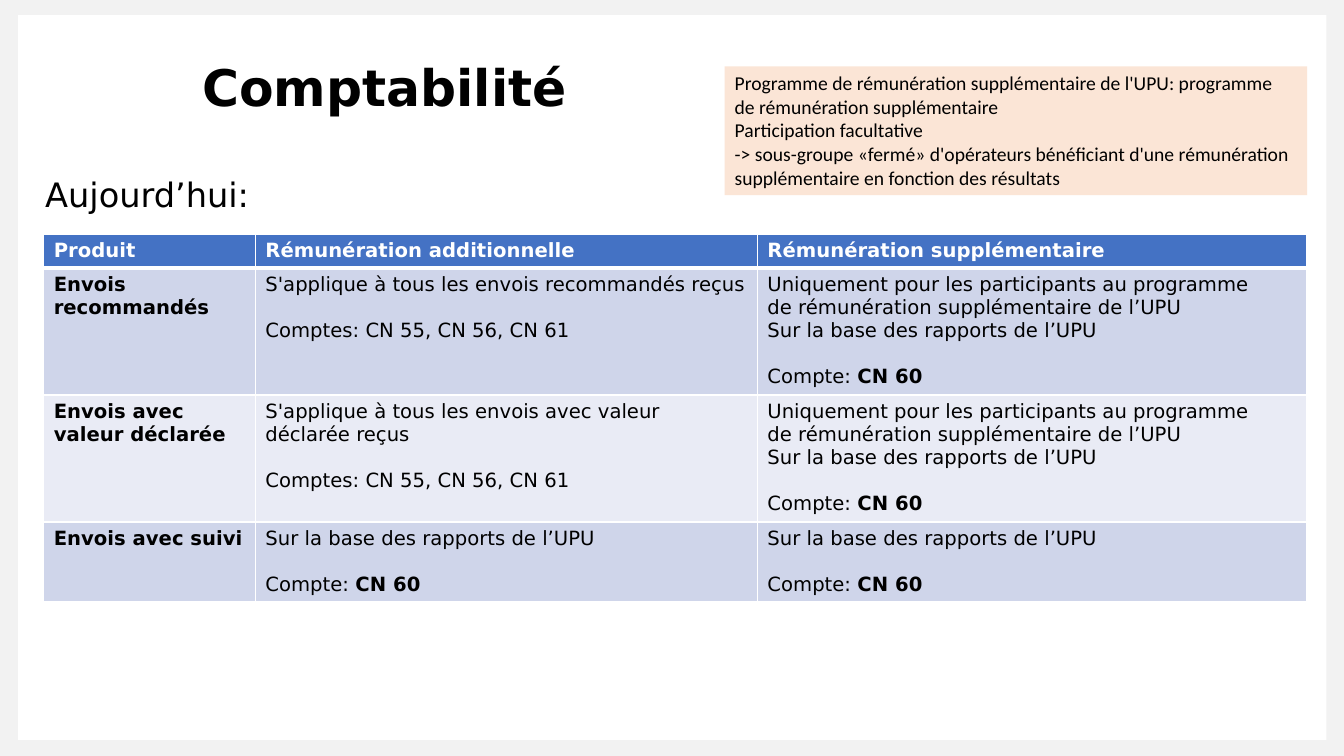
"""Build the slide comparing additional and supplementary remuneration accounts."""
from dataclasses import dataclass

from lxml import etree
from pptx import Presentation
from pptx import util as u
from pptx.dml.color import RGBColor
from pptx.enum import shapes, text
from pptx.oxml import ns

COLORS = {
    "frame": "F2F2F2", "panel": "FFFFFF", "text": "000000", "note": "FBE5D6",
    "header": "4472C4", "odd": "CFD5EA", "even": "E9EBF5", "border": "FFFFFF",
}
HEADING_FONT, NOTE_FONT = "DejaVu Sans", "Calibri"
BLANK_LINE = 16.3


@dataclass(frozen=True)
class Box:
    left: float
    top: float
    width: float
    height: float

    def lengths(self) -> list[u.Length]:
        return [u.Pt(v) for v in (self.left, self.top, self.width, self.height)]


@dataclass(frozen=True)
class Run:
    words: str
    bold: bool = False


@dataclass(frozen=True)
class Para:
    runs: tuple[Run, ...]
    before: float = 0


@dataclass(frozen=True)
class Style:
    size: float
    font: str = HEADING_FONT
    color: str = "text"


@dataclass(frozen=True)
class ProductRow:
    height: float
    fill: str
    cells: tuple[tuple[Para, ...], ...]
    color: str = "text"
    rule: float = 1


def line(words: str, bold: bool = False) -> Para:
    return Para((Run(words, bold),))


def account(label: str, form: str = "") -> Para:
    runs = (Run(label), Run(form, True)) if form else (Run(label),)
    return Para(runs, BLANK_LINE)


def write(frame, paras: tuple[Para, ...], style: Style) -> None:
    frame.word_wrap = True
    for index, para in enumerate(paras):
        paragraph = frame.paragraphs[0] if index == 0 else frame.add_paragraph()
        paragraph.alignment = text.PP_ALIGN.LEFT
        if para.before:
            paragraph.space_before = u.Pt(para.before)
        for part in para.runs:
            for number, words in enumerate(part.words.split("\n")):
                if number:
                    paragraph.add_line_break()
                run = paragraph.add_run()
                run.text = words
                run.font.name = style.font
                run.font.size = u.Pt(style.size)
                run.font.bold = part.bold
                run.font.color.rgb = RGBColor.from_string(COLORS[style.color])


def add_panel(slide, box: Box, fill: str):
    panel = slide.shapes.add_shape(shapes.MSO_SHAPE.RECTANGLE, *box.lengths())
    panel.shadow.inherit = False
    panel.fill.solid()
    panel.fill.fore_color.rgb = RGBColor.from_string(COLORS[fill])
    panel.line.fill.background()
    return panel


def add_text(slide, box: Box, para: Para, style: Style, anchor) -> None:
    frame = slide.shapes.add_textbox(*box.lengths()).text_frame
    frame.vertical_anchor = anchor
    write(frame, (para,), style)


def set_borders(cell, bottom: float, top: float) -> None:
    properties = cell._tc.get_or_add_tcPr()
    widths = {"a:lnL": 1, "a:lnR": 1, "a:lnT": top, "a:lnB": bottom}
    for position, (tag, width) in enumerate(widths.items()):
        border = etree.Element(ns.qn(tag), w=str(u.Pt(width)))
        fill = etree.SubElement(border, ns.qn("a:solidFill"))
        etree.SubElement(fill, ns.qn("a:srgbClr"), val=COLORS["border"])
        properties.insert(position, border)


def add_products(slide, box: Box, widths: tuple[float, ...], rows: tuple[ProductRow, ...]) -> None:
    table = slide.shapes.add_table(len(rows), len(widths), *box.lengths()).table
    for column, width in zip(table.columns, widths):
        column.width = u.Pt(width)
    top_rule = 1
    for r, row in enumerate(rows):
        table.rows[r].height = u.Pt(row.height)
        for c, paras in enumerate(row.cells):
            cell = table.cell(r, c)
            cell.fill.solid()
            cell.fill.fore_color.rgb = RGBColor.from_string(COLORS[row.fill])
            set_borders(cell, row.rule, top_rule)
            write(cell.text_frame, paras, Style(14, color=row.color))
        top_rule = row.rule


REPORTS = line("Sur la base des rapports de l’UPU")
COMMON_ACCOUNTS = account("Comptes: CN 55, CN 56, CN 61")
TRACKED = (REPORTS, account("Compte: ", "CN 60"))
PARTICIPANTS = (
    line("Uniquement pour les participants au programme\nde rémunération supplémentaire de l’UPU"),
    *TRACKED,
)
HEADINGS = ("Produit", "Rémunération additionnelle", "Rémunération supplémentaire")
ROWS = (
    ProductRow(22.9, "header", tuple((line(h, True),) for h in HEADINGS), "panel", 3),
    ProductRow(89.3, "odd", (
        (line("Envois recommandés", True),),
        (line("S'applique à tous les envois recommandés reçus"), COMMON_ACCOUNTS),
        PARTICIPANTS)),
    ProductRow(89.3, "even", (
        (line("Envois avec valeur déclarée", True),),
        (line("S'applique à tous les envois avec valeur déclarée reçus"), COMMON_ACCOUNTS),
        PARTICIPANTS)),
    ProductRow(56.4, "odd", ((line("Envois avec suivi", True),), TRACKED, TRACKED)),
)
NOTE = (
    line("Programme de rémunération supplémentaire de l'UPU: programme de rémunération supplémentaire"),
    line("Participation facultative\n-> sous-groupe «fermé» d'opérateurs bénéficiant d'une "
         "rémunération supplémentaire en fonction des résultats"),
)


def main() -> None:
    deck = Presentation()
    deck.slide_width, deck.slide_height = u.Pt(960), u.Pt(540)
    slide = deck.slides.add_slide(deck.slide_layouts[6])
    add_panel(slide, Box(0, 0, 960, 540), "frame")
    add_panel(slide, Box(13, 10.8, 934.5, 517.7), "panel")
    add_text(slide, Box(137.5, 38.9, 796.3, 45.4), line("Comptabilité", True),
             Style(36), text.MSO_ANCHOR.MIDDLE)
    add_text(slide, Box(25.2, 121, 907.9, 370.8), line("Aujourd’hui:"),
             Style(24), text.MSO_ANCHOR.TOP)
    widths = (151.2, 358.6, 392.4)
    add_products(slide, Box(31.2, 167.3, sum(widths), sum(r.height for r in ROWS)), widths, ROWS)
    note = add_panel(slide, Box(517.7, 47.4, 416, 92), "note")
    note.text_frame.vertical_anchor = text.MSO_ANCHOR.TOP
    write(note.text_frame, NOTE, Style(14, NOTE_FONT))
    deck.save("out.pptx")


if __name__ == "__main__":
    main()
